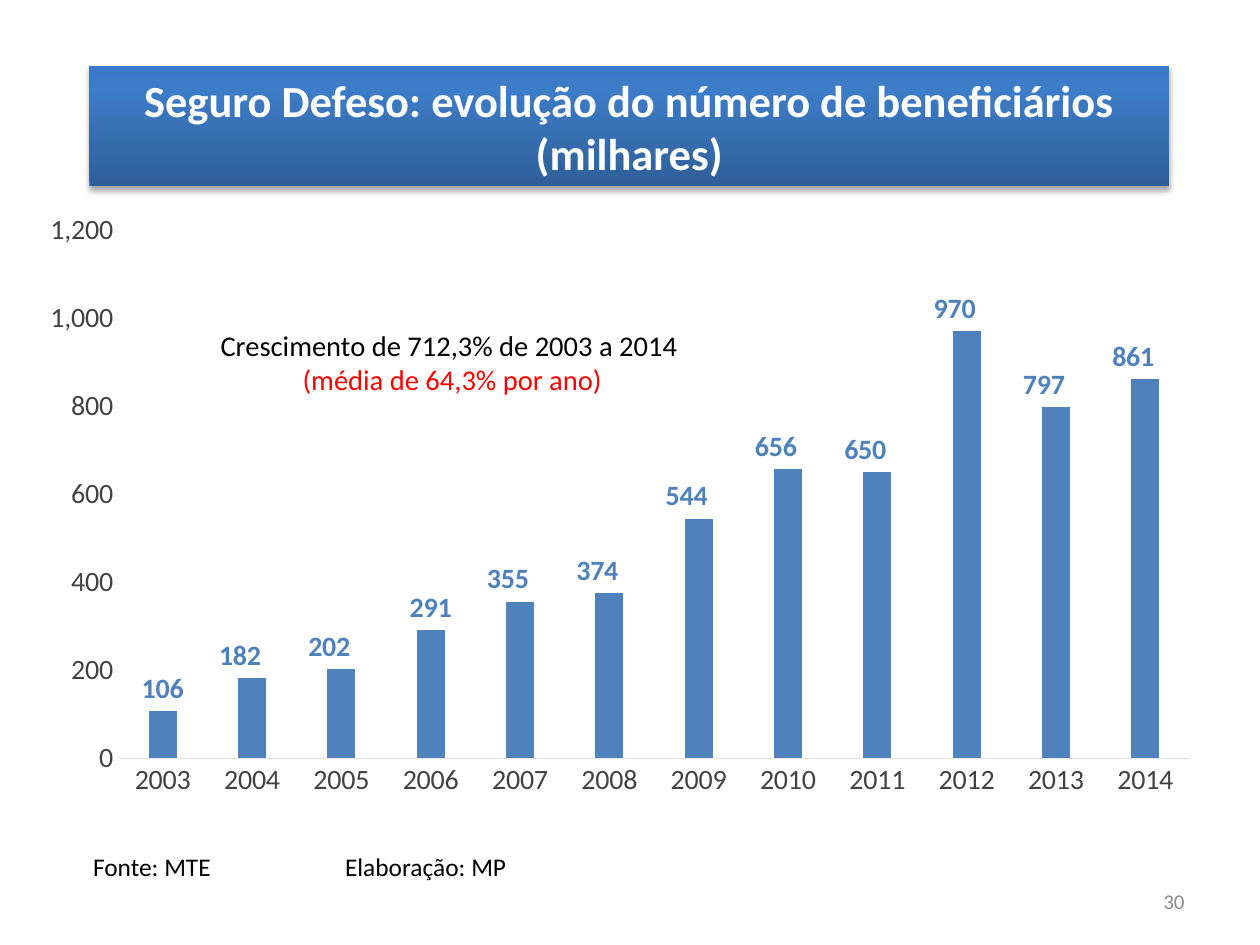
"""Build the slide on the number of Seguro Defeso beneficiaries."""
import lxml.etree
import pptx
import pptx.chart.data
import pptx.dml.color
import pptx.enum.chart
import pptx.enum.text
import pptx.oxml
import pptx.oxml.ns
import pptx.util

RGBColor = pptx.dml.color.RGBColor
ALIGN = pptx.enum.text.PP_ALIGN
ANCHOR = pptx.enum.text.MSO_ANCHOR
BLACK = RGBColor(0x00, 0x00, 0x00)
WHITE = RGBColor(0xFF, 0xFF, 0xFF)
RED = RGBColor(0xFF, 0x00, 0x00)
GREY = RGBColor(0x8C, 0x8C, 0x8C)
AXIS_TEXT = RGBColor(0x42, 0x42, 0x42)
AXIS_LINE = RGBColor(0xE3, 0xE3, 0xE3)
BAR_BLUE = RGBColor(0x4F, 0x81, 0xBD)
BANNER_STOPS = (
    (0, RGBColor(0x2F, 0x5F, 0x99)),
    (80, RGBColor(0x3D, 0x7C, 0xC7)),
    (100, RGBColor(0x3A, 0x7C, 0xCB)),
)

COLUMNS, ROWS = 100, 75
FONT = "Calibri"
FIRST_YEAR = 2003
BENEFICIARIES = (106, 182, 202, 291, 355, 374, 544, 656, 650, 970, 797, 861)
LABEL_SHIFT = -0.01
CENTRED_LABELS = (0, 3)
PLOT_LAYOUT = {"x": 0.076, "y": 0.066, "w": 0.889, "h": 0.798}


def set_attributes(target, values):
    """Set each named value on the target."""
    for name, value in values.items():
        setattr(target, name, value)


def set_font(font, size, color, bold=False):
    """Give a font its face, size, weight and colour."""
    set_attributes(font, {"name": FONT, "size": pptx.util.Pt(size), "bold": bold})
    font.color.rgb = color


def grid_box(presentation, left, top, width, height):
    """Turn grid columns and rows into a position and size."""
    column = presentation.slide_width / COLUMNS
    row = presentation.slide_height / ROWS
    return [round(value) for value in (left * column, top * row, width * column, height * row)]


def write_lines(shape, lines, size, align, anchor, bold=False):
    """Write one paragraph for each pair of text and colour."""
    frame = shape.text_frame
    set_attributes(frame, {
        "word_wrap": True,
        "auto_size": pptx.enum.text.MSO_AUTO_SIZE.NONE,
        "vertical_anchor": anchor,
    })
    frame.text = "\n".join(text for text, color in lines)
    for paragraph, (text, color) in zip(frame.paragraphs, lines):
        paragraph.alignment = align
        set_font(paragraph.runs[0].font, size, color, bold)


def add_text(slide, box, lines, size, align=ALIGN.LEFT, anchor=ANCHOR.TOP):
    """Add a text box with its lines."""
    write_lines(slide.shapes.add_textbox(*box), lines, size, align, anchor)


def add_banner(slide, box, text):
    """Move the title and give it a gradient and a shadow."""
    title = slide.shapes.title
    set_attributes(title, dict(zip(("left", "top", "width", "height"), box)))
    write_lines(title, [(text, WHITE)], 25.4, ALIGN.CENTER, ANCHOR.MIDDLE, True)
    namespace = pptx.oxml.ns.nsdecls("a")
    stops = "".join(
        f'<a:gs pos="{share * 1000}"><a:srgbClr val="{color}"/></a:gs>'
        for share, color in BANNER_STOPS
    )
    gradient = (f'<a:gradFill {namespace} rotWithShape="1"><a:gsLst>{stops}</a:gsLst>'
                '<a:lin ang="16200000" scaled="0"/></a:gradFill>')
    shadow = (f'<a:effectLst {namespace}><a:outerShdw blurRad="40000" dist="23000" '
              'dir="5400000" rotWithShape="0"><a:srgbClr val="000000">'
              '<a:alpha val="35000"/></a:srgbClr></a:outerShdw></a:effectLst>')
    for xml in (gradient, shadow):
        title.element.spPr.append(pptx.oxml.parse_xml(xml))


def make_layout(values, target=""):
    """Make a manual chart layout from shares of the chart."""
    parts = "".join(f'<c:{name} val="{value}"/>' for name, value in values.items())
    modes = '<c:xMode val="edge"/><c:yMode val="edge"/>' if target else ""
    return pptx.oxml.parse_xml(
        f'<c:layout {pptx.oxml.ns.nsdecls("c")}><c:manualLayout>'
        f'{target}{modes}{parts}</c:manualLayout></c:layout>')


def place_plot(chart):
    """Fix the inner plot area of the chart."""
    plot_area = chart.element.find(".//" + pptx.oxml.ns.qn("c:plotArea"))
    for layout in plot_area.findall(pptx.oxml.ns.qn("c:layout")):
        plot_area.remove(layout)
    plot_area.insert(0, make_layout(PLOT_LAYOUT, '<c:layoutTarget val="inner"/>'))


def format_axis(axis):
    """Apply the style that both axes share."""
    set_attributes(axis, {
        "has_major_gridlines": False,
        "major_tick_mark": pptx.enum.chart.XL_TICK_MARK.NONE,
        "minor_tick_mark": pptx.enum.chart.XL_TICK_MARK.NONE,
    })
    set_font(axis.tick_labels.font, 16, AXIS_TEXT)


def label_bars(plot, series):
    """Show bold values above the bars and nudge most of them left."""
    position = pptx.enum.chart.XL_LABEL_POSITION.OUTSIDE_END
    plot.has_data_labels = True
    for labels in (plot.data_labels, series.data_labels):
        set_attributes(labels, {
            "show_value": True, "position": position,
            "number_format": "0", "number_format_is_linked": False,
        })
        set_font(labels.font, 16, BAR_BLUE, True)
    for index in range(len(BENEFICIARIES)):
        if index not in CENTRED_LABELS:
            label = series.points[index].data_label
            set_font(label.font, 16, BAR_BLUE, True)
            label.position = position
            element = series.data_labels._element.xpath(f'c:dLbl[c:idx/@val="{index}"]')[0]
            element.insert(1, make_layout({"x": LABEL_SHIFT, "y": 0}))


def add_bar_chart(slide, box):
    """Add the column chart of beneficiaries by year."""
    data = pptx.chart.data.CategoryChartData()
    data.categories = [str(FIRST_YEAR + index) for index in range(len(BENEFICIARIES))]
    data.add_series("Series 1", BENEFICIARIES)
    kind = pptx.enum.chart.XL_CHART_TYPE.COLUMN_CLUSTERED
    chart = slide.shapes.add_chart(kind, *box, data).chart
    set_attributes(chart, {"has_legend": False, "has_title": False})
    set_font(chart.font, 16, BLACK)
    for axis in (chart.category_axis, chart.value_axis):
        format_axis(axis)
    category_line = chart.category_axis.format.line
    category_line.color.rgb = AXIS_LINE
    category_line.width = pptx.util.Pt(0.25)
    set_attributes(chart.value_axis, {
        "minimum_scale": 0, "maximum_scale": 1200, "major_unit": 200,
    })
    chart.value_axis.format.line.fill.background()
    set_attributes(chart.value_axis.tick_labels, {
        "number_format": "#,##0", "number_format_is_linked": False,
    })
    plot = chart.plots[0]
    set_attributes(plot, {"gap_width": 219, "overlap": -27, "vary_by_categories": False})
    series = plot.series[0]
    series.format.fill.solid()
    series.format.fill.fore_color.rgb = BAR_BLUE
    label_bars(plot, series)
    place_plot(chart)


def main():
    """Build and save the slide."""
    presentation = pptx.Presentation()
    presentation.slide_width = pptx.util.Inches(10)
    presentation.slide_height = pptx.util.Inches(7.5)
    slide = presentation.slides.add_slide(presentation.slide_layouts[5])
    add_text(slide, grid_box(presentation, 6.4, 67.1, 85, 3.6),
             [("Fonte: MTE \t\t\tElaboração: MP", BLACK)], 14.5)
    add_banner(slide, grid_box(presentation, 7.1, 5.2, 85.7, 9.6),
               "Seguro Defeso: evolução do número de beneficiários (milhares)")
    add_bar_chart(slide, grid_box(presentation, 2.1, 14.8, 95.7, 52.5))
    add_text(slide, grid_box(presentation, 13.1, 25.5, 45.6, 6.5),
             [("Crescimento de 712,3% de 2003 a 2014 ", BLACK),
              ("(média de 64,3% por ano)", RED)], 16.3, ALIGN.CENTER)
    add_text(slide, grid_box(presentation, 71.7, 69.5, 23.3, 4),
             [("30", GREY)], 12, ALIGN.RIGHT, ANCHOR.MIDDLE)
    presentation.save("out.pptx")


if __name__ == "__main__":
    main()
